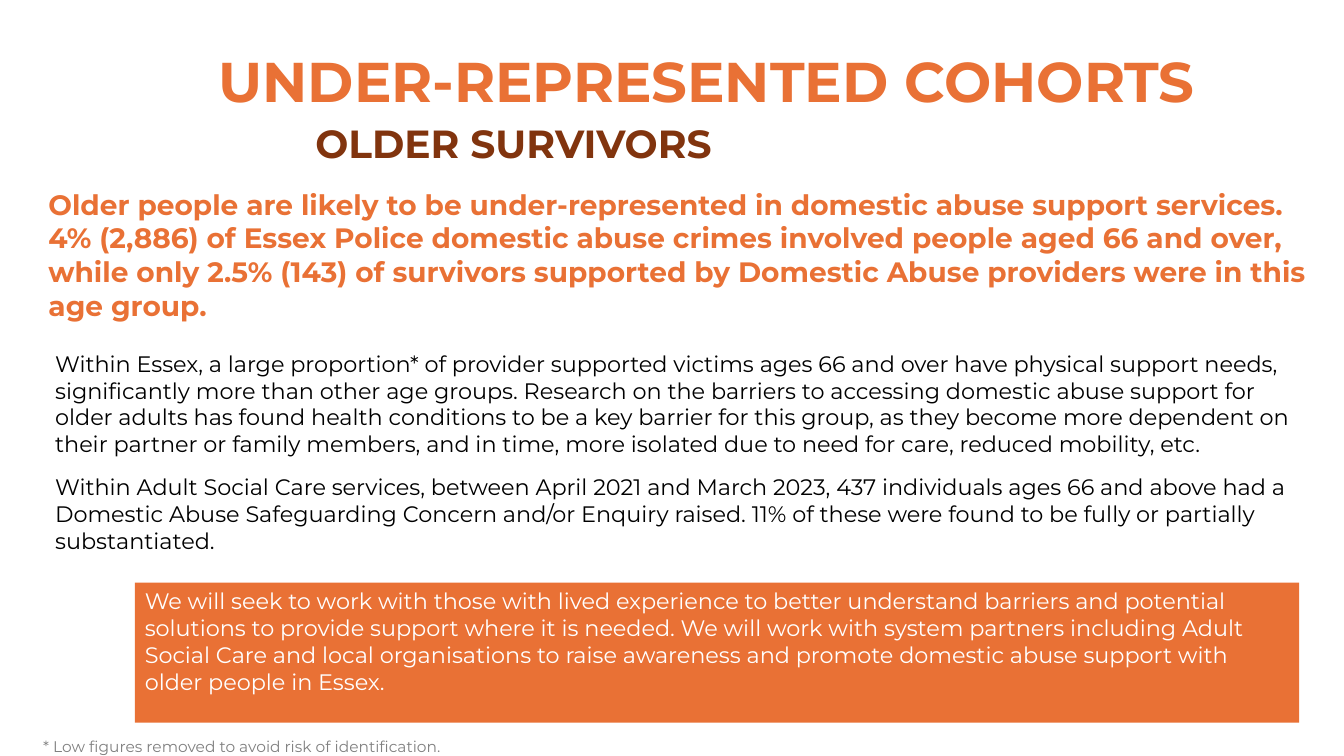
import pptx
import pptx.util
import pptx.dml.color
import pptx.enum.shapes
import pptx.enum.text

Cm = pptx.util.Cm
Pt = pptx.util.Pt
ORANGE = pptx.dml.color.RGBColor(0xE9, 0x71, 0x35)
BROWN = pptx.dml.color.RGBColor(0x81, 0x34, 0x0E)
BLACK = pptx.dml.color.RGBColor(0, 0, 0)
GREY = pptx.dml.color.RGBColor(0x80, 0x80, 0x80)
WHITE = pptx.dml.color.RGBColor(0xFF, 0xFF, 0xFF)


def write(frame, *paragraphs, size, color, bold=False, after=0, inset=True):
    frame.word_wrap = True
    frame.vertical_anchor = pptx.enum.text.MSO_ANCHOR.TOP
    if not inset:
        frame.margin_left = frame.margin_right = 0
        frame.margin_top = frame.margin_bottom = 0
    for index, text in enumerate(paragraphs):
        paragraph = frame.add_paragraph() if index else frame.paragraphs[0]
        paragraph.alignment = pptx.enum.text.PP_ALIGN.LEFT
        paragraph.space_after = Pt(after)
        run = paragraph.add_run()
        run.text = text
        run.font.name = SlideBuilder.FONT
        run.font.size = Pt(size)
        run.font.bold = bold
        run.font.color.rgb = color


class SlideBuilder:
    FONT = "Montserrat"

    def __init__(self, slide):
        self.slide = slide

    def text(self, place, *paragraphs, **style):
        box = self.slide.shapes.add_textbox(*map(Cm, place))
        write(box.text_frame, *paragraphs, **style)

    def panel(self, place, fill, *paragraphs, **style):
        panel = self.slide.shapes.add_shape(
            pptx.enum.shapes.MSO_SHAPE.RECTANGLE, *map(Cm, place))
        panel.shadow.inherit = False
        panel.fill.solid()
        panel.fill.fore_color.rgb = fill
        panel.line.fill.background()
        write(panel.text_frame, *paragraphs, **style)


def main():
    deck = pptx.Presentation()
    deck.slide_width = Cm(33.87)
    deck.slide_height = Cm(19.05)
    builder = SlideBuilder(deck.slides.add_slide(deck.slide_layouts[6]))

    builder.text((5.26, 1.04, 28.09, 1.96), "UNDER-REPRESENTED COHORTS",
                 size=40, color=ORANGE, bold=True)
    builder.panel((7.7, 2.87, 20.04, 1.45), WHITE, "OLDER SURVIVORS",
                  size=28, color=BROWN, bold=True)
    builder.text(
        (1.22, 4.72, 31.83, 2.87),
        "Older people are likely to be under-represented in domestic abuse support services. "
        "4% (2,886) of Essex Police domestic abuse crimes involved people aged 66 and over, "
        "while only 2.5% (143) of survivors supported by Domestic Abuse providers were in "
        "this age group.",
        size=20, color=ORANGE, bold=True, inset=False)
    builder.text(
        (1.14, 8.69, 31.83, 5.44),
        "Within Essex, a large proportion* of provider supported victims ages 66 and over "
        "have physical support needs, significantly more than other age groups. Research on "
        "the barriers to accessing domestic abuse support for older adults has found health "
        "conditions to be a key barrier for this group, as they become more dependent on "
        "their partner or family members, and in time, more isolated due to need for care, "
        "reduced mobility, etc.",
        "Within Adult Social Care services, between April 2021 and March 2023, 437 "
        "individuals ages 66 and above had a Domestic Abuse Safeguarding Concern and/or "
        "Enquiry raised. 11% of these were found to be fully or partially substantiated.",
        size=16, color=BLACK, after=11.3)
    builder.panel(
        (3.4, 14.68, 29.34, 3.53), ORANGE,
        "We will seek to work with those with lived experience to better understand barriers "
        "and potential solutions to provide support where it is needed. We will work with "
        "system partners including Adult Social Care and local organisations to raise "
        "awareness and promote domestic abuse support with older people in Essex.",
        size=16, color=WHITE, after=11.3)
    builder.text((1.09, 18.57, 32.69, 0.79),
                 "* Low figures removed to avoid risk of identification.",
                 size=11, color=GREY, after=11.3, inset=False)

    deck.save("out.pptx")


if __name__ == "__main__":
    main()
